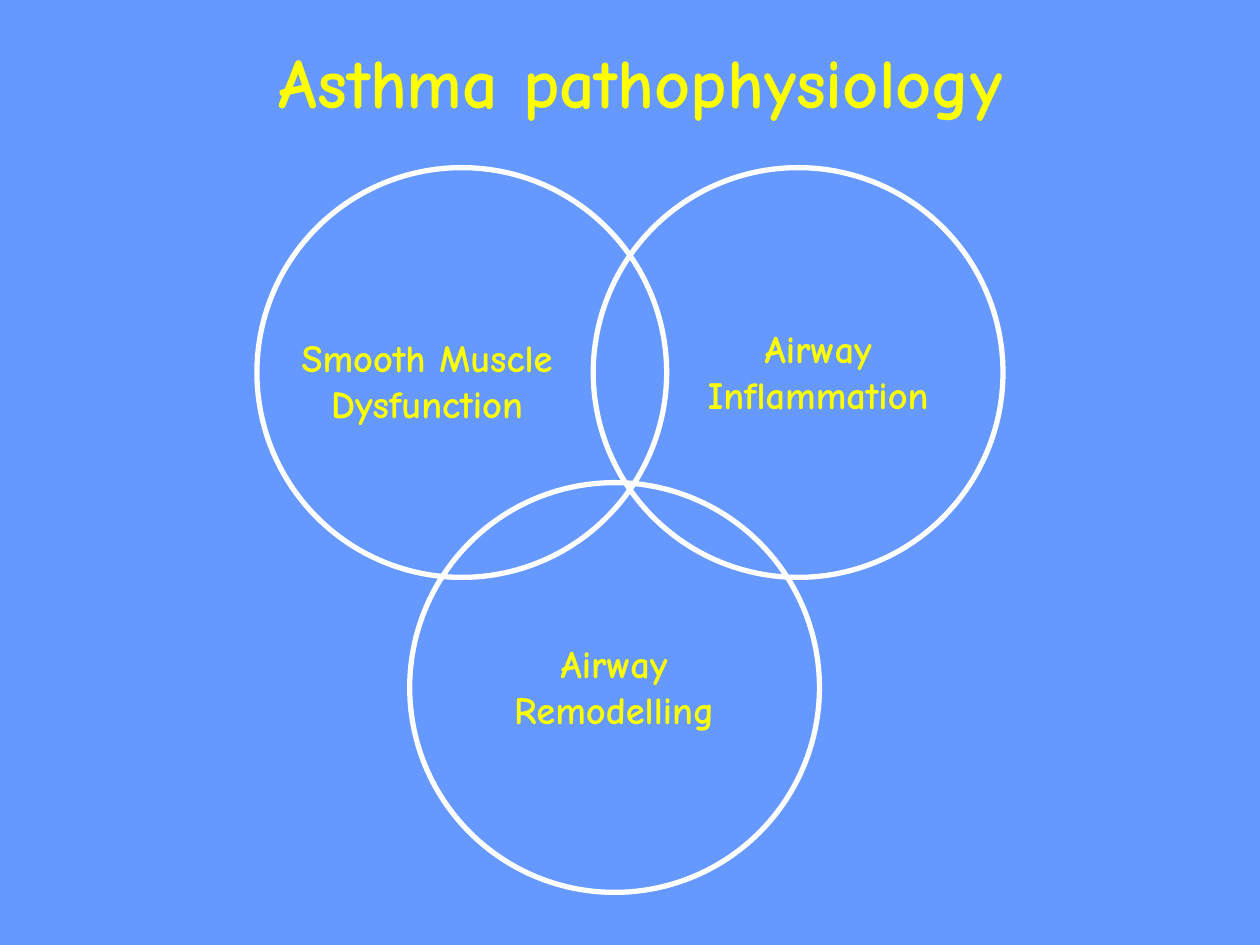
from pptx import Presentation
from pptx.dml.color import RGBColor
from pptx.enum.shapes import MSO_SHAPE as Shape
from pptx.enum.text import MSO_ANCHOR as Anchor, MSO_AUTO_SIZE as AutoSize, PP_ALIGN as Align
from pptx.util import Cm, Pt

FONT = "Comic Neue"
BLUE, YELLOW, WHITE = "6699FF", "FFFF00", "FFFFFF"
DIAMETER = 8.26
LABEL_HEIGHT = 2.11

TITLE = "Asthma pathophysiology"
TITLE_BOX = (4.52, 0.64, 16.79, 1.96)
CIRCLES = [(5.18, 3.38), (11.96, 3.38), (8.26, 9.73)]
LABELS = [
    ("Smooth Muscle\nDysfunction", 5.31, 6.6, 6.6),
    ("Airway\nInflammation", 13.79, 6.43, 5.41),
    ("Airway\nRemodelling", 9.98, 12.78, 4.8),
]


def color(code):
    return RGBColor.from_string(code)


def write(frame, words, size):
    frame.text = words
    frame.word_wrap = False
    frame.auto_size = AutoSize.NONE
    frame.vertical_anchor = Anchor.TOP
    for paragraph in frame.paragraphs:
        paragraph.alignment = Align.CENTER
        for run in paragraph.runs:
            run.font.name = FONT
            run.font.size = Pt(size)
            run.font.bold = True
            run.font.color.rgb = color(YELLOW)


def add_circle(slide, left, top):
    circle = slide.shapes.add_shape(
        Shape.OVAL, Cm(left), Cm(top), Cm(DIAMETER), Cm(DIAMETER))
    circle.shadow.inherit = False
    circle.fill.background()
    circle.line.color.rgb = color(WHITE)
    circle.line.width = Pt(3)


def main():
    deck = Presentation()
    deck.slide_width, deck.slide_height = Cm(25.4), Cm(19.05)
    slide = deck.slides.add_slide(deck.slide_layouts[5])
    slide.background.fill.solid()
    slide.background.fill.fore_color.rgb = color(BLUE)

    title = slide.shapes.title
    title.left, title.top, title.width, title.height = map(Cm, TITLE_BOX)
    write(title.text_frame, TITLE, 40)

    for left, top in CIRCLES:
        add_circle(slide, left, top)
    for words, left, top, width in LABELS:
        label = slide.shapes.add_textbox(
            Cm(left), Cm(top), Cm(width), Cm(LABEL_HEIGHT))
        write(label.text_frame, words, 22)

    deck.save("out.pptx")


if __name__ == "__main__":
    main()
